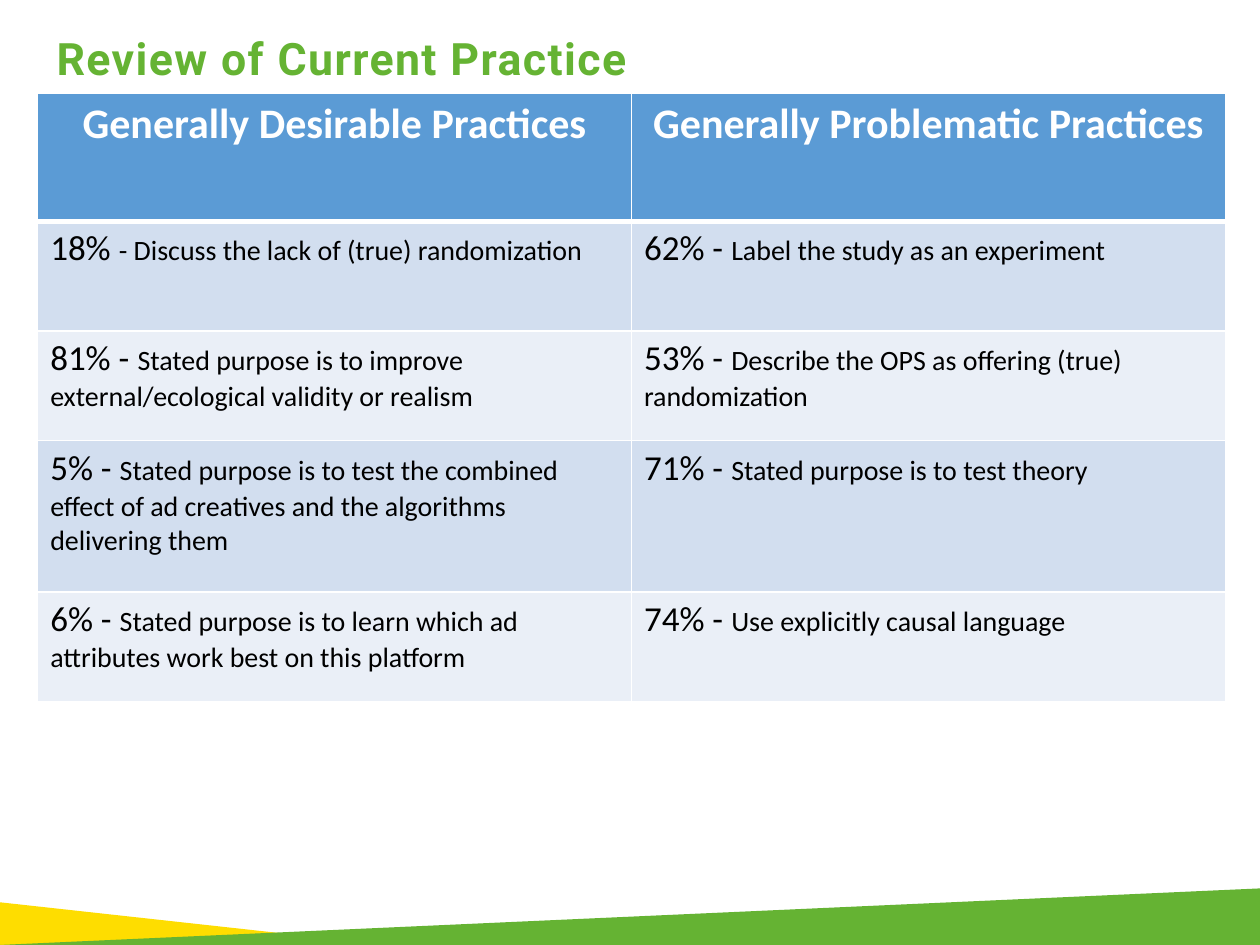
from lxml import etree
from pptx import Presentation
from pptx.dml.color import RGBColor
from pptx.enum.text import PP_ALIGN
from pptx.oxml.ns import qn
from pptx.util import Cm, Pt

CENTER = PP_ALIGN.CENTER
LEFT = PP_ALIGN.LEFT

COLORS = {
    "green": "65B333",
    "yellow": "FEDD00",
    "header": "5B9BD5",
    "odd_row": "D2DEEF",
    "even_row": "EAEFF7",
    "white": "FFFFFF",
    "black": "000000",
}
SLIDE_WIDTH, SLIDE_HEIGHT = 25.4, 19.05
COLUMN_WIDTH = 11.97
ROW_HEIGHTS = [2.59, 2.21, 2.21, 3.05, 2.21]
HEADERS = ["Generally Desirable Practices", "Generally Problematic Practices"]
PRACTICES = [
    [("18% ", "- Discuss the lack of (true) randomization"),
     ("62% - ", "Label the study as an experiment")],
    [("81% - ", "Stated purpose is to improve external/ecological validity or realism"),
     ("53% - ", "Describe the OPS as offering (true) randomization")],
    [("5% - ", "Stated purpose is to test the combined effect of ad creatives "
               "and the algorithms delivering them"),
     ("71% - ", "Stated purpose is to test theory")],
    [("6% - ", "Stated purpose is to learn which ad attributes work best on this platform"),
     ("74% - ", "Use explicitly causal language")],
]


def rgb(name):
    return RGBColor.from_string(COLORS[name])


def add_run(paragraph, text, size, color, font="Calibri", bold=False):
    run = paragraph.add_run()
    run.text = text
    run.font.name = font
    run.font.size = Pt(size)
    run.font.bold = bold
    run.font.color.rgb = rgb(color)
    return run


def add_wedge(slide, points, color):
    corners = [(Cm(x), Cm(y)) for x, y in points]
    builder = slide.shapes.build_freeform(*corners[0])
    builder.add_line_segments(corners[1:], close=True)
    shape = builder.convert_to_shape()
    shape.shadow.inherit = False
    shape.fill.solid()
    shape.fill.fore_color.rgb = rgb(color)
    shape.line.fill.background()


def add_title(slide, text):
    box = slide.shapes.add_textbox(Cm(0.89), Cm(0.61), Cm(22.12), Cm(1.52))
    box.text_frame.word_wrap = True
    paragraph = box.text_frame.paragraphs[0]
    paragraph.line_spacing = 0.9
    run = add_run(paragraph, text, 25.5, "green", font="Roboto", bold=True)
    run.font._element.set("spc", "80")


def set_borders(cell, widths):
    properties = cell._tc.get_or_add_tcPr()
    for side, width in widths.items():
        line = etree.SubElement(properties, qn(f"a:ln{side}"), w=str(Pt(width)))
        fill = etree.SubElement(line, qn("a:solidFill"))
        etree.SubElement(fill, qn("a:srgbClr"), val=COLORS["white"])


def fill_cell(cell, runs, fill, color, alignment=LEFT, bold=False, top=1, bottom=1):
    set_borders(cell, {"L": 1, "R": 1, "T": top, "B": bottom})
    cell.fill.solid()
    cell.fill.fore_color.rgb = rgb(fill)
    paragraph = cell.text_frame.paragraphs[0]
    paragraph.alignment = alignment
    for text, size in runs:
        add_run(paragraph, text, size, color, bold=bold)


def add_practice_table(slide):
    frame = slide.shapes.add_table(
        len(ROW_HEIGHTS), len(HEADERS), Cm(0.76), Cm(1.87),
        Cm(COLUMN_WIDTH * len(HEADERS)), Cm(sum(ROW_HEIGHTS)))
    table = frame.table
    for column in table.columns:
        column.width = Cm(COLUMN_WIDTH)
    for row, height in zip(table.rows, ROW_HEIGHTS):
        row.height = Cm(height)
    for column, header in enumerate(HEADERS):
        fill_cell(table.cell(0, column), [(header, 24)], "header", "white",
                  alignment=CENTER, bold=True, bottom=3)
    for row, practices in enumerate(PRACTICES, start=1):
        fill = "odd_row" if row % 2 else "even_row"
        for column, (share, practice) in enumerate(practices):
            fill_cell(table.cell(row, column), [(share, 20), (practice, 16)],
                      fill, "black", top=3 if row == 1 else 1)


def main():
    presentation = Presentation()
    presentation.slide_width = Cm(SLIDE_WIDTH)
    presentation.slide_height = Cm(SLIDE_HEIGHT)
    slide = presentation.slides.add_slide(presentation.slide_layouts[6])
    bottom_left = (0, SLIDE_HEIGHT)
    add_wedge(slide, [(0, 18.19), (7.82, SLIDE_HEIGHT), bottom_left], "yellow")
    add_wedge(slide, [(SLIDE_WIDTH, SLIDE_HEIGHT), (SLIDE_WIDTH, 17.91), bottom_left], "green")
    add_title(slide, "Review of Current Practice")
    add_practice_table(slide)
    presentation.save("out.pptx")


if __name__ == "__main__":
    main()
